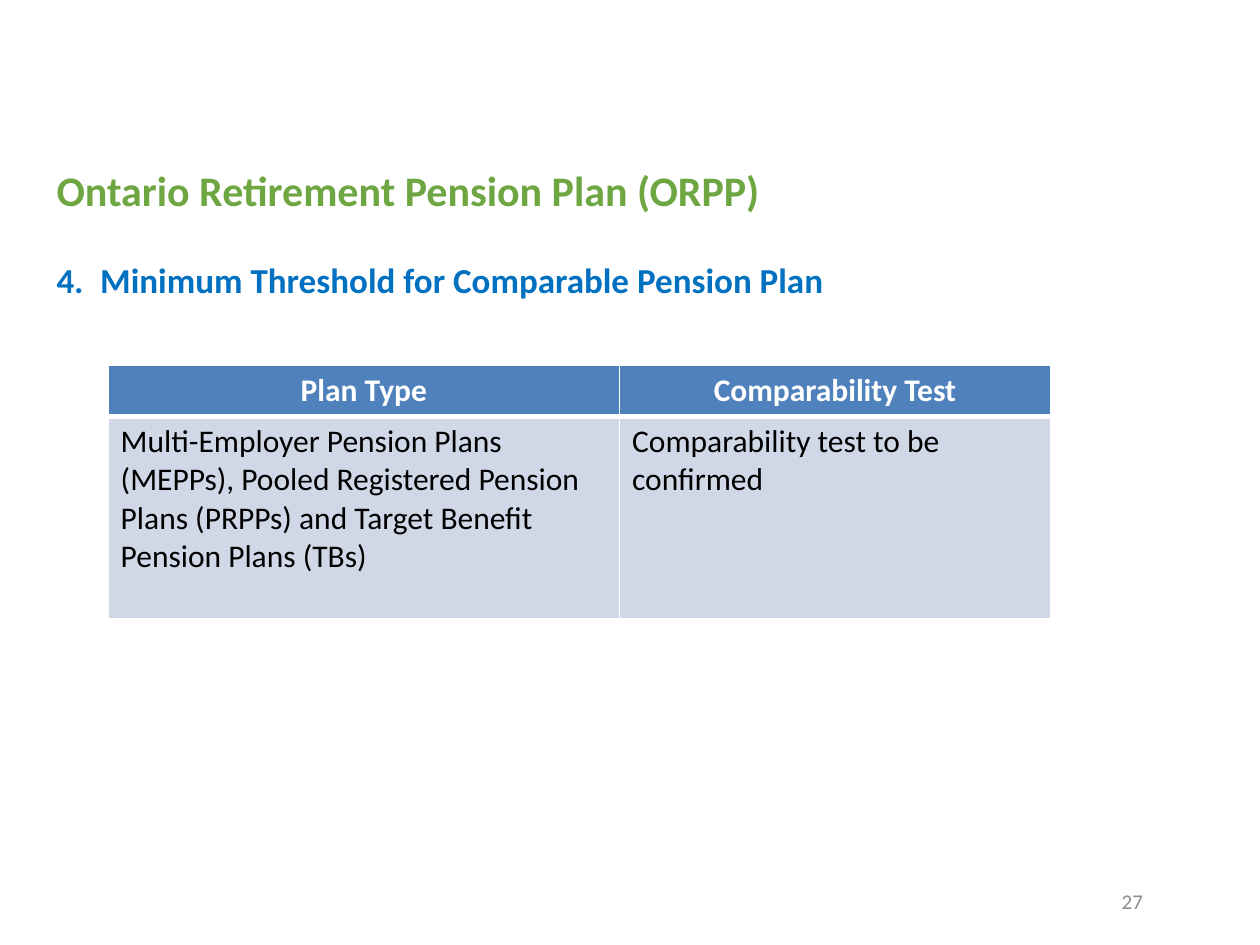
from lxml import etree
from pptx import Presentation
from pptx.dml.color import RGBColor
from pptx.enum.text import MSO_ANCHOR, PP_ALIGN
from pptx.oxml.ns import qn
from pptx.util import Cm, Pt

COLORS = {
    "green": "6EA642", "blue": "0070C0", "gray": "8C8C8C", "white": "FFFFFF",
    "black": "000000", "header": "4F81BD", "body": "D0D8E8",
}
TEXTS = [
    {"text": "Ontario Retirement Pension Plan (ORPP)", "box": (0.89, 3.18, 23.62, 1.27),
     "anchor": MSO_ANCHOR.BOTTOM, "align": PP_ALIGN.LEFT,
     "format": {"size": 24, "bold": True, "color": "green"}},
    {"text": "4.\tMinimum Threshold for Comparable Pension Plan",
     "box": (0.89, 5.08, 23.62, 11.43), "hanging": 0.88,
     "anchor": MSO_ANCHOR.TOP, "align": PP_ALIGN.LEFT,
     "format": {"size": 20, "bold": True, "color": "blue"}},
    {"text": "27", "box": (18.21, 17.65, 5.08, 1.02),
     "anchor": MSO_ANCHOR.MIDDLE, "align": PP_ALIGN.RIGHT,
     "format": {"size": 12, "bold": False, "color": "gray"}},
]
TABLE_ROWS = [
    ("Plan Type", "Comparability Test"),
    ("Multi-Employer Pension Plans (MEPPs), Pooled Registered Pension Plans (PRPPs) "
     "and Target Benefit Pension Plans (TBs)",
     "Comparability test to be confirmed"),
]
TABLE_LEFT, TABLE_TOP = 2.18, 7.37
COLUMN_WIDTHS = (10.31, 8.69)
ROW_HEIGHTS = (1.02, 4.09)
ROW_STYLES = [
    {"fill": "header", "align": PP_ALIGN.CENTER, "bottom": 3,
     "format": {"size": 18, "bold": True, "color": "white"}},
    {"fill": "body", "align": PP_ALIGN.LEFT, "bottom": 1,
     "format": {"size": 18, "bold": False, "color": "black"}},
]


def rgb(name):
    return RGBColor.from_string(COLORS[name])


def write(text_frame, text, align, style):
    paragraph = text_frame.paragraphs[0]
    paragraph.alignment = align
    run = paragraph.add_run()
    run.text = text
    values = {"name": "Calibri", "size": Pt(style["size"]), "bold": style["bold"]}
    for attribute, value in values.items():
        setattr(run.font, attribute, value)
    run.font.color.rgb = rgb(style["color"])
    return paragraph


def add_text(slide, item):
    shape = slide.shapes.add_textbox(*map(Cm, item["box"]))
    shape.text_frame.word_wrap = True
    shape.text_frame.vertical_anchor = item["anchor"]
    paragraph = write(shape.text_frame, item["text"], item["align"], item["format"])
    if "hanging" in item:
        properties = paragraph._p.get_or_add_pPr()
        properties.set("marL", str(Cm(item["hanging"])))
        properties.set("indent", str(-Cm(item["hanging"])))


def add_borders(cell, widths):
    """Draw white cell borders; widths maps a:ln tags to points."""
    properties = cell._tc.get_or_add_tcPr()
    for position, (tag, width) in enumerate(widths.items()):
        line = etree.Element(qn(tag), w=str(Pt(width)))
        fill = etree.SubElement(line, qn("a:solidFill"))
        etree.SubElement(fill, qn("a:srgbClr"), val=COLORS["white"])
        properties.insert(position, line)


def add_plan_table(slide):
    frame = slide.shapes.add_table(
        len(ROW_HEIGHTS), len(COLUMN_WIDTHS), Cm(TABLE_LEFT), Cm(TABLE_TOP),
        Cm(sum(COLUMN_WIDTHS)), Cm(sum(ROW_HEIGHTS)))
    table = frame.table
    for column, width in zip(table.columns, COLUMN_WIDTHS):
        column.width = Cm(width)
    top = 1
    for row, height, texts, style in zip(table.rows, ROW_HEIGHTS, TABLE_ROWS, ROW_STYLES):
        row.height = Cm(height)
        for cell, text in zip(row.cells, texts):
            cell.fill.solid()
            cell.fill.fore_color.rgb = rgb(style["fill"])
            write(cell.text_frame, text, style["align"], style["format"])
            add_borders(cell, {"a:lnL": 1, "a:lnR": 1, "a:lnT": top, "a:lnB": style["bottom"]})
        top = style["bottom"]


def main():
    presentation = Presentation()
    presentation.slide_width, presentation.slide_height = Cm(25.4), Cm(19.05)
    slide = presentation.slides.add_slide(presentation.slide_layouts[6])
    for item in TEXTS:
        add_text(slide, item)
    add_plan_table(slide)
    presentation.save("out.pptx")


if __name__ == "__main__":
    main()
